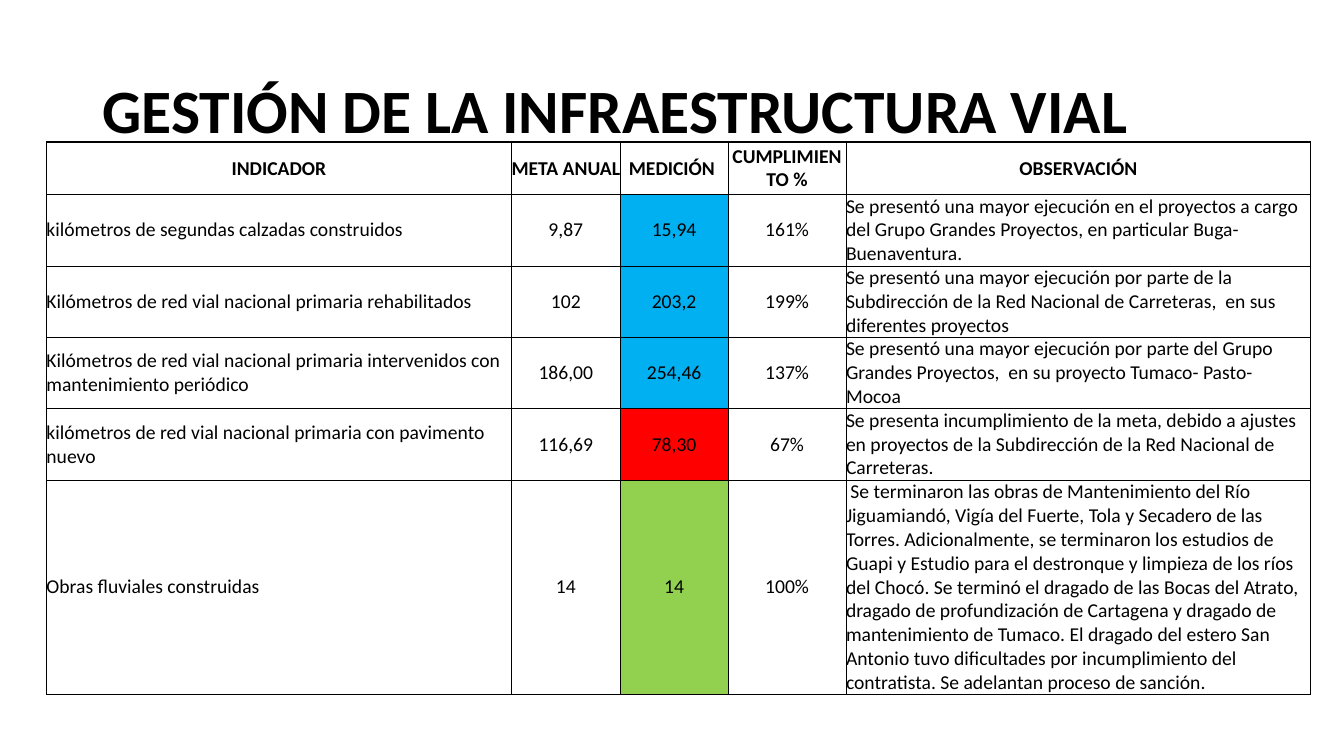
from dataclasses import dataclass

from lxml.etree import SubElement
from pptx import Presentation
from pptx.dml.color import RGBColor
from pptx.enum.text import MSO_ANCHOR, PP_ALIGN
from pptx.oxml.ns import qn
from pptx.slide import Slide
from pptx.table import Table, _Cell
from pptx.text.text import _Paragraph
from pptx.util import Cm, Pt

BLACK = RGBColor(0x00, 0x00, 0x00)
WHITE = RGBColor(0xFF, 0xFF, 0xFF)
BLUE = RGBColor(0x00, 0xB0, 0xF0)
RED = RGBColor(0xFF, 0x00, 0x00)
GREEN = RGBColor(0x92, 0xD0, 0x50)

FONT = "Calibri"
TITLE = "GESTIÓN DE LA INFRAESTRUCTURA VIAL"
HEADERS = ("INDICADOR", "META ANUAL", "MEDICIÓN ", "CUMPLIMIENTO %", "OBSERVACIÓN")
COLUMN_WIDTHS = (11.72, 2.74, 2.72, 2.97, 11.71)
HEADER_HEIGHT = 1.32
LINE_HEIGHT = 0.6


@dataclass(frozen=True)
class Indicator:
    name: str
    goal: str
    measure: str
    compliance: str
    remark: str
    status: RGBColor
    lines: int = 3


INDICATORS = (
    Indicator(
        "kilómetros de segundas calzadas construidos", "9,87", "15,94", "161%",
        "Se presentó una mayor ejecución en el proyectos a cargo del Grupo Grandes "
        "Proyectos, en particular Buga- Buenaventura.",
        BLUE,
    ),
    Indicator(
        "Kilómetros de red vial nacional primaria rehabilitados", "102", "203,2", "199%",
        "Se presentó una mayor ejecución por parte de la Subdirección de la Red "
        "Nacional de Carreteras,  en sus diferentes proyectos",
        BLUE,
    ),
    Indicator(
        "Kilómetros de red vial nacional primaria intervenidos con mantenimiento periódico",
        "186,00", "254,46", "137%",
        "Se presentó una mayor ejecución por parte del Grupo Grandes Proyectos,  en su "
        "proyecto Tumaco- Pasto- Mocoa",
        BLUE,
    ),
    Indicator(
        "kilómetros de red vial nacional primaria con pavimento nuevo",
        "116,69", "78,30", "67%",
        "Se presenta incumplimiento de la meta, debido a ajustes en proyectos de la "
        "Subdirección de la Red Nacional de Carreteras.",
        RED,
    ),
    Indicator(
        "Obras fluviales construidas", "14", "14", "100%",
        " Se terminaron las obras de Mantenimiento del Río Jiguamiandó, Vigía del Fuerte, "
        "Tola y Secadero de las Torres. Adicionalmente, se terminaron los estudios de "
        "Guapi y Estudio para el destronque y limpieza de los ríos del Chocó. Se terminó "
        "el dragado de las Bocas del Atrato, dragado de profundización de Cartagena y "
        "dragado de mantenimiento de Tumaco. El dragado del estero San Antonio tuvo "
        "dificultades por incumplimiento del contratista. Se adelantan proceso de sanción.",
        GREEN, lines=9,
    ),
)


def format_runs(para: _Paragraph, size: float, bold: bool) -> None:
    for span in para.runs:
        span.font.name = FONT
        span.font.size = Pt(size)
        span.font.bold = bold
        span.font.color.rgb = BLACK


def add_title(page: Slide) -> None:
    box = page.shapes.add_textbox(Cm(2.33), Cm(1.02), Cm(29.21), Cm(3.68))
    frame = box.text_frame
    frame.word_wrap = True
    frame.vertical_anchor = MSO_ANCHOR.MIDDLE
    frame.text = TITLE
    para = frame.paragraphs[0]
    para.line_spacing = 0.9
    format_runs(para, 44, True)


def add_borders(cell: _Cell, top_width: float) -> None:
    properties = cell._tc.get_or_add_tcPr()
    for side in "LRTB":
        width = top_width if side == "T" else 0.5
        line = SubElement(properties, qn(f"a:ln{side}"), w=str(Pt(width)))
        fill = SubElement(line, qn("a:solidFill"))
        SubElement(fill, qn("a:srgbClr"), val=str(BLACK))


def fill_cell(
    cell: _Cell, text: str, centred: bool, header: bool, colour: RGBColor | None
) -> None:
    """Write the text of one cell and set its borders and background."""
    cell.margin_left = cell.margin_right = cell.margin_top = cell.margin_bottom = 0
    cell.vertical_anchor = MSO_ANCHOR.MIDDLE
    cell.text_frame.text = text
    para = cell.text_frame.paragraphs[0]
    para.alignment = PP_ALIGN.CENTER if centred else PP_ALIGN.LEFT
    format_runs(para, 14, header)
    add_borders(cell, 1 if header else 0.5)
    if colour is None:
        cell.fill.background()
    else:
        cell.fill.solid()
        cell.fill.fore_color.rgb = colour


def fill_indicator_row(table: Table, row: int, indicator: Indicator) -> None:
    table.rows[row].height = Cm(LINE_HEIGHT * indicator.lines)
    entries = (
        (indicator.name, False, None),
        (indicator.goal, True, None),
        (indicator.measure, True, indicator.status),
        (indicator.compliance, True, None),
        (indicator.remark, False, WHITE),
    )
    for column, (text, centred, colour) in enumerate(entries):
        fill_cell(table.cell(row, column), text, centred, False, colour)


def add_indicator_table(page: Slide) -> None:
    height = HEADER_HEIGHT + LINE_HEIGHT * sum(item.lines for item in INDICATORS)
    table = page.shapes.add_table(
        len(INDICATORS) + 1, len(HEADERS),
        Cm(1.17), Cm(3.58), Cm(sum(COLUMN_WIDTHS)), Cm(height),
    ).table
    table.first_row = False
    table.horz_banding = False
    for column, width in zip(table.columns, COLUMN_WIDTHS):
        column.width = Cm(width)
    table.rows[0].height = Cm(HEADER_HEIGHT)
    for column, header in enumerate(HEADERS):
        fill_cell(table.cell(0, column), header, True, True, None)
    for row, indicator in enumerate(INDICATORS, start=1):
        fill_indicator_row(table, row, indicator)


def main() -> None:
    deck = Presentation()
    deck.slide_width = Cm(33.87)
    deck.slide_height = Cm(19.05)
    page = deck.slides.add_slide(deck.slide_layouts[6])
    add_title(page)
    add_indicator_table(page)
    deck.save("out.pptx")


if __name__ == "__main__":
    main()
